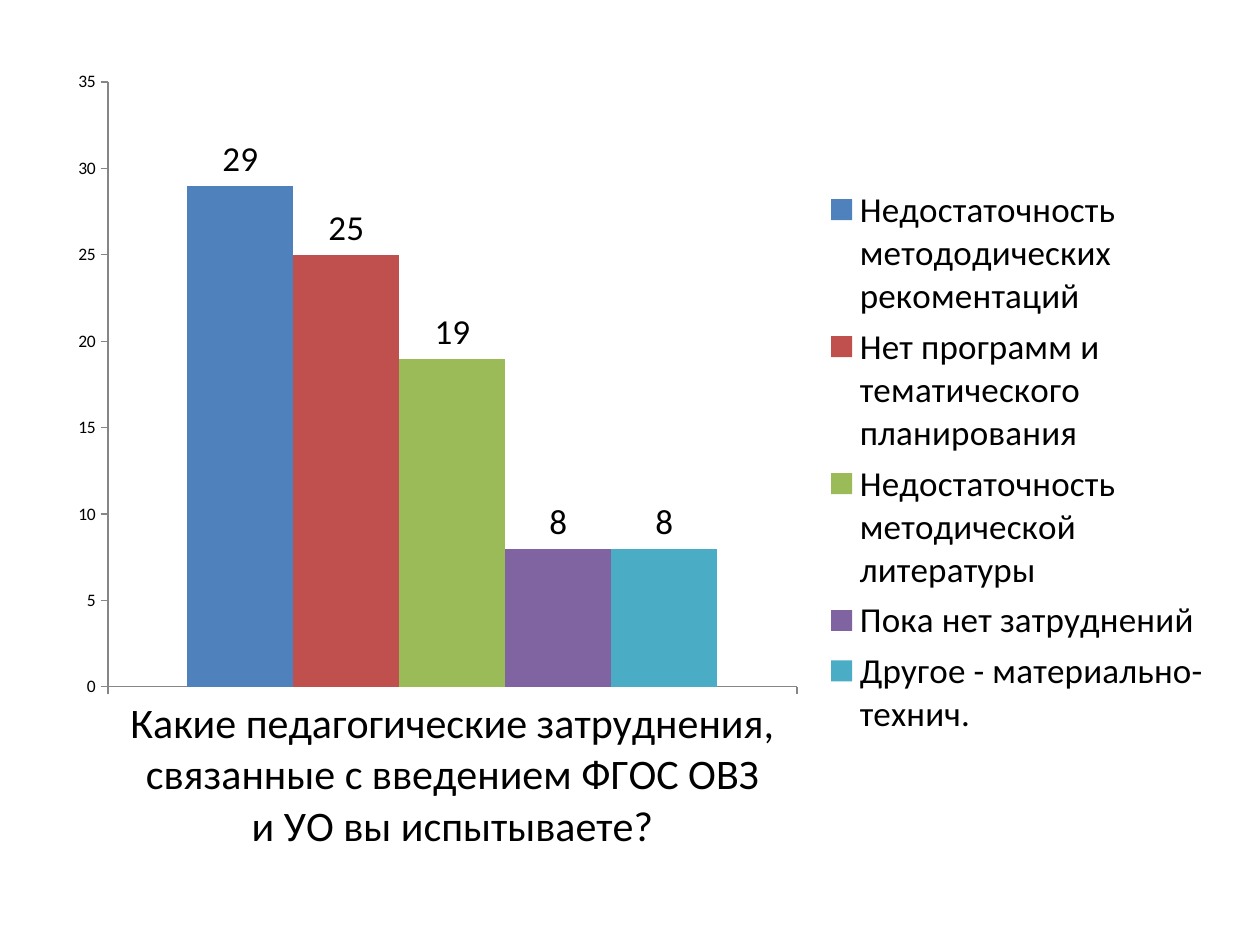
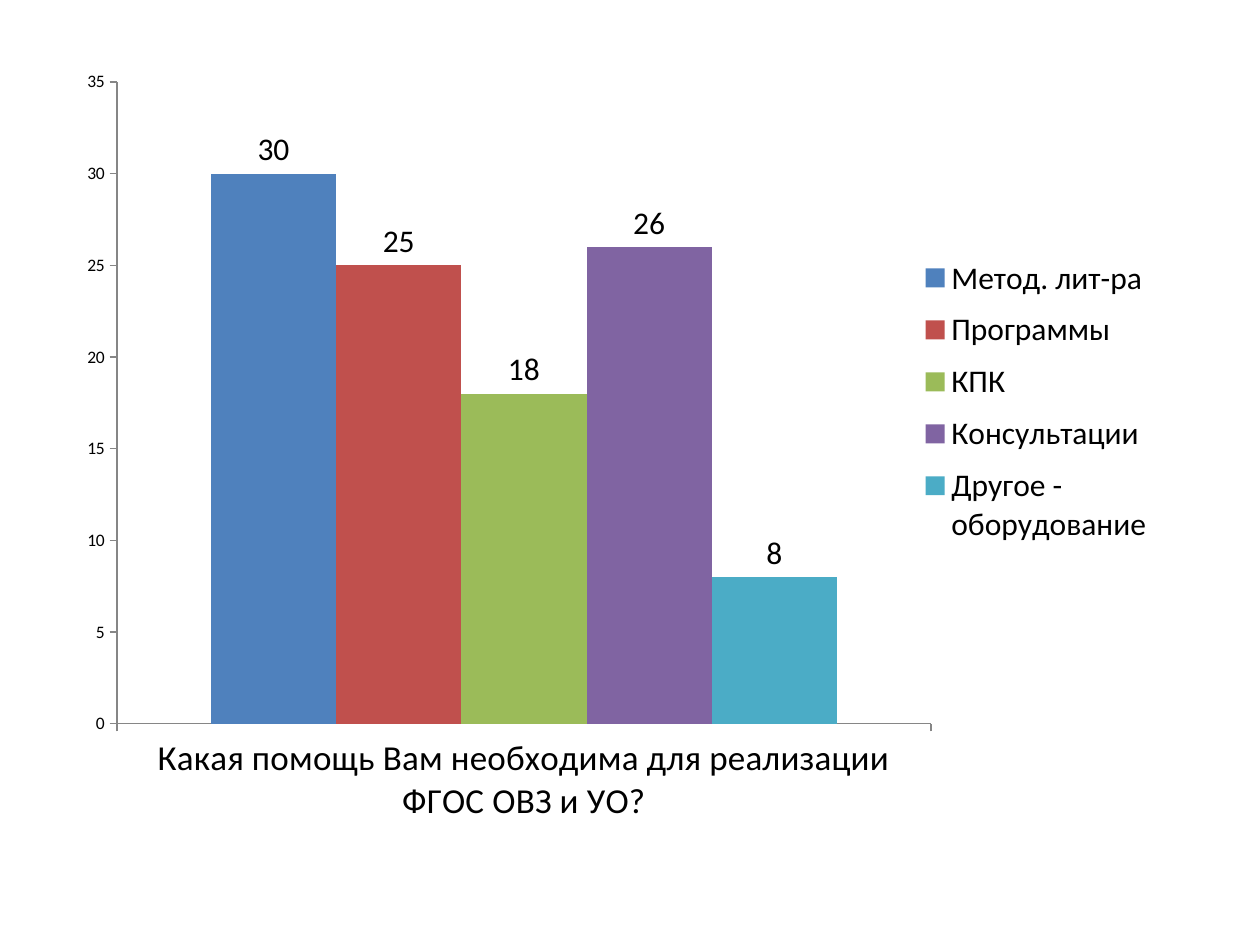
import pptx
import pptx.chart.data
import pptx.dml.color
import pptx.enum.chart
import pptx.oxml
import pptx.util

EMU_PER_PX = 914400 / 126
FONT = "Calibri"
COLORS = {
    "text": "000000",
    "axis": "868686",
    "background": "FFFFFF",
    "blue": "4F81BD",
    "red": "C0504D",
    "green": "9BBB59",
    "purple": "8064A2",
    "teal": "4BACC6",
}
SERIES_COLORS = ("blue", "red", "green", "purple", "teal")

DIFFICULTIES = {
    "question_lines": (
        "Какие педагогические затруднения,",
        "связанные с введением ФГОС ОВЗ",
        "и УО вы испытываете?",
    ),
    "answers": (
        ("Недостаточность метододических рекоментаций", 29),
        ("Нет программ и тематического планирования", 25),
        ("Недостаточность методической литературы", 19),
        ("Пока нет затруднений", 8),
        ("Другое - материально-технич.", 8),
    ),
    "box": (54, 55, 1171, 814),
    "plot": (54, 27, 689, 605),
    "question_size": 24,
    "answer_size": 20,
}
HELP = {
    "question_lines": (
        "Какая помощь Вам необходима для реализации",
        "ФГОС ОВЗ и УО?",
    ),
    "answers": (
        ("Метод. лит-ра", 30),
        ("Программы", 25),
        ("КПК", 18),
        ("Консультации", 26),
        ("Другое - оборудование", 8),
    ),
    "box": (64, 55, 1142, 784),
    "plot": (53, 27, 814, 642),
    "legend": (847, 190, 250, 312),
    "question_size": 20,
    "answer_size": 18,
}


def px(length):
    return pptx.util.Emu(round(length * EMU_PER_PX))


def rgb(name):
    return pptx.dml.color.RGBColor.from_string(COLORS[name])


def style_font(font, size):
    font.name = FONT
    font.size = pptx.util.Pt(size)
    font.bold = False
    font.color.rgb = rgb("text")


def style_axis(axis, size):
    axis.has_major_gridlines = False
    axis.major_tick_mark = pptx.enum.chart.XL_TICK_MARK.OUTSIDE
    axis.format.line.color.rgb = rgb("axis")
    axis.format.line.width = pptx.util.Pt(0.75)
    style_font(axis.tick_labels.font, size)


def keep_labels_level(chart):
    body = chart.element.xpath("c:chart/c:plotArea/c:catAx/c:txPr/a:bodyPr")[0]
    body.set("rot", "0")
    body.set("vert", "horz")


def manual_layout(area, box, inner=False):
    left, top, width, height = area
    fractions = zip(
        "xywh", (left / box[2], top / box[3], width / box[2], height / box[3])
    )
    target = '<c:layoutTarget val="inner"/>' if inner else ""
    modes = '<c:xMode val="edge"/><c:yMode val="edge"/>'
    sizes = "".join(f'<c:{key} val="{value:.4f}"/>' for key, value in fractions)
    return pptx.oxml.parse_xml(
        '<c:layout xmlns:c="http://schemas.openxmlformats.org/drawingml/2006/chart">'
        f"<c:manualLayout>{target}{modes}{sizes}</c:manualLayout></c:layout>"
    )


def place_plot(chart, area, box):
    plot_area = chart.element.xpath("c:chart/c:plotArea")[0]
    for layout in plot_area.xpath("c:layout"):
        plot_area.remove(layout)
    plot_area.insert(0, manual_layout(area, box, inner=True))


def place_legend(chart, area, box):
    legend = chart.element.xpath("c:chart/c:legend")[0]
    for layout in legend.xpath("c:layout"):
        legend.remove(layout)
    legend.xpath("c:legendPos")[0].addnext(manual_layout(area, box))


def style_series(series, color, label_size):
    series.format.fill.solid()
    series.format.fill.fore_color.rgb = rgb(color)
    series.invert_if_negative = False
    labels = series.data_labels
    labels.show_value = True
    labels.position = pptx.enum.chart.XL_LABEL_POSITION.OUTSIDE_END
    style_font(labels.font, label_size)


def add_survey_chart(slide, survey):
    box = survey["box"]
    data = pptx.chart.data.CategoryChartData()
    data.categories = ["\n".join(survey["question_lines"])]
    for answer, count in survey["answers"]:
        data.add_series(answer, [count])
    chart = slide.shapes.add_chart(
        pptx.enum.chart.XL_CHART_TYPE.COLUMN_CLUSTERED, *map(px, box), data
    ).chart
    chart.has_title = False
    style_font(chart.font, 10)

    style_axis(chart.category_axis, survey["question_size"])
    keep_labels_level(chart)
    style_axis(chart.value_axis, 10)
    chart.value_axis.minimum_scale = 0
    chart.value_axis.maximum_scale = 35
    chart.value_axis.major_unit = 5

    plot = chart.plots[0]
    plot.gap_width = 150
    plot.overlap = 0
    plot.vary_by_categories = False
    for series, color in zip(plot.series, SERIES_COLORS):
        style_series(series, color, survey["answer_size"])
    place_plot(chart, survey["plot"], box)

    chart.has_legend = True
    chart.legend.position = pptx.enum.chart.XL_LEGEND_POSITION.RIGHT
    chart.legend.include_in_layout = False
    style_font(chart.legend.font, survey["answer_size"])
    if "legend" in survey:
        place_legend(chart, survey["legend"], box)


def add_survey_slide(presentation, survey):
    slide = presentation.slides.add_slide(presentation.slide_layouts[6])
    slide.background.fill.solid()
    slide.background.fill.fore_color.rgb = rgb("background")
    add_survey_chart(slide, survey)


def main():
    presentation = pptx.Presentation()
    presentation.slide_width = px(1260)
    presentation.slide_height = px(945)
    for survey in (DIFFICULTIES, HELP):
        add_survey_slide(presentation, survey)
    presentation.save("out.pptx")


if __name__ == "__main__":
    main()
